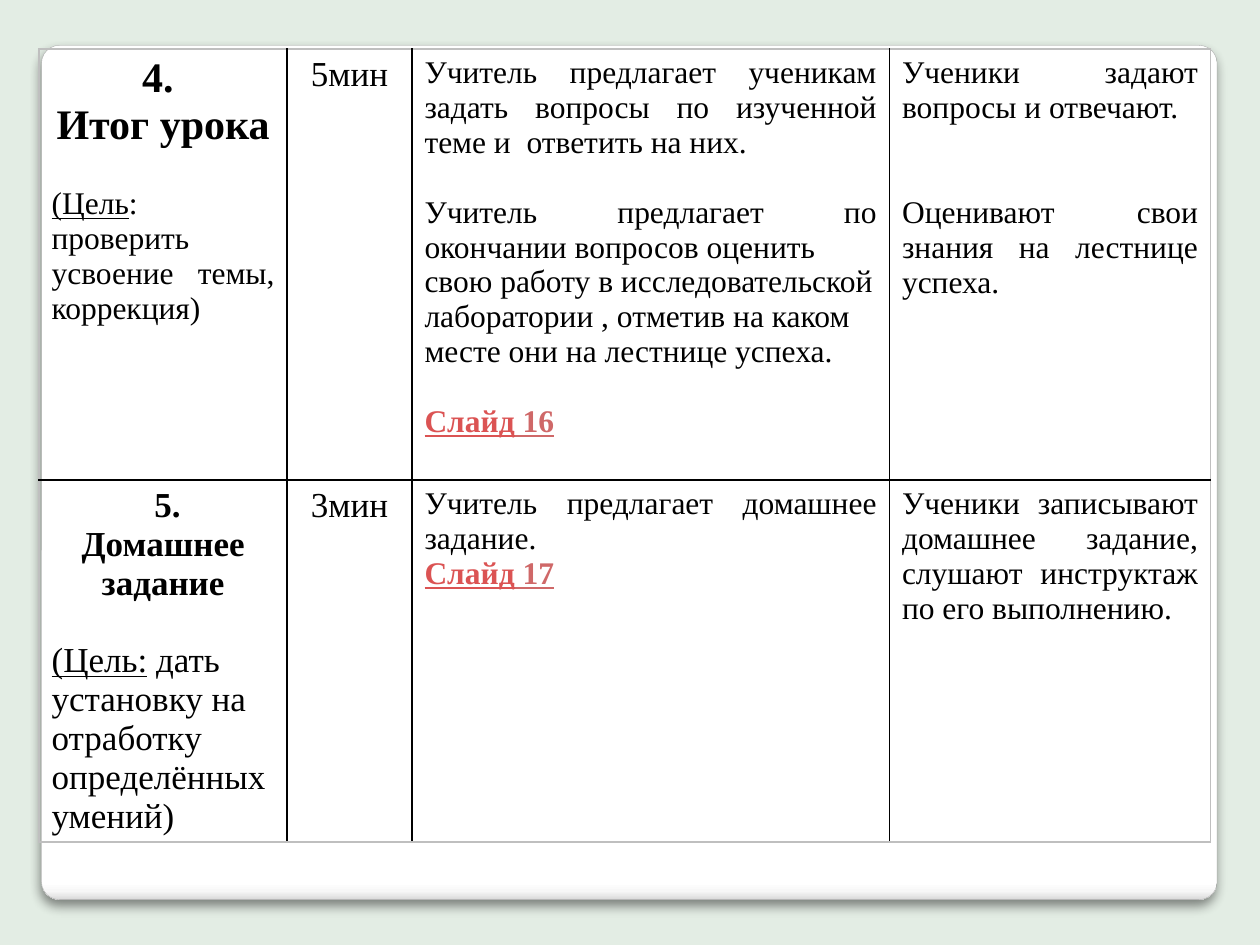
from lxml import etree
from pptx import Presentation
from pptx.dml.color import RGBColor
from pptx.enum import shapes, text
from pptx.oxml import parse_xml
from pptx.oxml.ns import nsdecls, qn
from pptx.util import Inches, Pt

BACKGROUND = RGBColor(0xE3, 0xED, 0xE4)
BLACK = RGBColor(0, 0, 0)
PANEL_LINE = RGBColor(0xA4, 0xA4, 0xA4)
OUTER_LINE = RGBColor(0xBF, 0xBF, 0xBF)
LINK = RGBColor(0xDB, 0x53, 0x53)
LINK_NUMBER = RGBColor(0xCF, 0x68, 0x68)
PANEL_STOPS = [(0, "FFFFFF"), (98, "FFFFFF"), (99, "F7F7F7"), (100, "DADADA")]

FONT = "Times New Roman"
LINE_HEIGHT = 1.11  # line height of the font relative to its size
CENTER = text.PP_ALIGN.CENTER
JUSTIFY = text.PP_ALIGN.JUSTIFY
LEFT = text.PP_ALIGN.LEFT

COLUMN_WIDTHS = [1.97, 0.99, 3.79, 2.55]
ROW_HEIGHTS = [3.42, 2.87]


def para(*runs, size=18, align=JUSTIFY, gap=0):
    """Describe a paragraph; gap is the space above it, in lines."""
    return runs, size, align, gap


def run(content, bold=False, underline=False, color=BLACK):
    return content, bold, underline, color


def slide_link(number):
    return (run("Слайд", True, True, LINK),
            run(f" {number}", True, True, LINK_NUMBER))


def goal(rest):
    return run("(Цель", underline=True), run(rest)


ROWS = [
    [
        [para(run("4. ", True), size=24, align=CENTER),
         para(run("Итог урока", True), size=24, align=CENTER),
         para(*goal(": проверить усвоение темы, коррекция)"), gap=1.11)],
        [para(run("5мин"), size=20, align=CENTER)],
        [para(run("Учитель предлагает ученикам задать вопросы по изученной "
                  "теме и  ответить на них.")),
         para(run("Учитель предлагает по окончании вопросов оценить "), gap=1),
         para(run("свою работу в исследовательской лаборатории , отметив "
                  "на каком месте они на лестнице успеха."), align=LEFT),
         para(*slide_link(16), gap=1)],
        [para(run("Ученики задают вопросы и отвечают.")),
         para(run("Оценивают свои знания на лестнице успеха."), gap=2)],
    ],
    [
        [para(run(" 5.", True), size=20, align=CENTER),
         para(run("Домашнее задание", True), size=20, align=CENTER),
         para(run("(Цель:", underline=True),
              run(" дать установку на отработку определённых умений)"),
              size=20, align=LEFT, gap=1)],
        [para(run("3мин"), size=20, align=CENTER)],
        [para(run("Учитель предлагает домашнее задание. ")),
         para(*slide_link(17))],
        [para(run("Ученики записывают домашнее задание, слушают инструктаж "
                  "по его выполнению. "))],
    ],
]


def add_panel(slide):
    sp = slide.shapes.add_shape(
        shapes.MSO_SHAPE.ROUNDED_RECTANGLE,
        Inches(0.33), Inches(0.36), Inches(9.33), Inches(6.78))
    sp.adjustments[0] = 0.021
    sp.line.color.rgb = PANEL_LINE
    sp.line.width = Pt(0.16)

    # Four-stop vertical gradient
    sp.fill.gradient()
    sp.fill.gradient_angle = 270
    stops = sp._element.spPr.find(qn("a:gradFill")).find(qn("a:gsLst"))
    for stop in list(stops):
        stops.remove(stop)
    for position, color in PANEL_STOPS:
        stop = etree.SubElement(stops, qn("a:gs"), pos=str(position * 1000))
        etree.SubElement(stop, qn("a:srgbClr"), val=color)

    # Soft shadow below the panel
    sp.shadow.inherit = False
    effects = sp._element.spPr.find(qn("a:effectLst"))
    effects.append(parse_xml(
        f'<a:outerShdw {nsdecls("a")} blurRad="{Pt(6)}" dist="{Pt(4)}" '
        'dir="5400000" rotWithShape="0"><a:srgbClr val="000000">'
        '<a:alpha val="45000"/></a:srgbClr></a:outerShdw>'))


def fill_cell(cell, paragraphs):
    cell.fill.background()
    tf = cell.text_frame
    for i, (runs, size, align, gap) in enumerate(paragraphs):
        p = tf.add_paragraph() if i else tf.paragraphs[0]
        p.alignment = align
        p.space_before = Pt(round(gap * size * LINE_HEIGHT))
        p.font.name = FONT
        p.font.size = Pt(size)
        for content, bold, underline, color in runs:
            r = p.add_run()
            r.text = content
            r.font.bold = bold
            r.font.underline = underline
            r.font.color.rgb = color


def set_borders(cell, colors):
    """Give the left, right, top and bottom edges their colours."""
    tc_pr = cell._tc.get_or_add_tcPr()
    for i, (side, color) in enumerate(zip("LRTB", colors)):
        tc_pr.insert(i, parse_xml(
            f'<a:ln{side} {nsdecls("a")} w="{Pt(1)}"><a:solidFill>'
            f'<a:srgbClr val="{color}"/></a:solidFill></a:ln{side}>'))


def add_lesson_table(slide):
    row_count, col_count = len(ROWS), len(COLUMN_WIDTHS)
    table = slide.shapes.add_table(
        row_count, col_count, Inches(0.31), Inches(0.39),
        Inches(sum(COLUMN_WIDTHS)), Inches(sum(ROW_HEIGHTS))).table
    table.first_row = table.horz_banding = False
    for column, width in zip(table.columns, COLUMN_WIDTHS):
        column.width = Inches(width)
    for row, height in zip(table.rows, ROW_HEIGHTS):
        row.height = Inches(height)

    # Black inner lines, grey outer frame
    for i, contents in enumerate(ROWS):
        for j, paragraphs in enumerate(contents):
            cell = table.cell(i, j)
            fill_cell(cell, paragraphs)
            outer = (j == 0, j == col_count - 1, i == 0, i == row_count - 1)
            set_borders(cell, [OUTER_LINE if o else BLACK for o in outer])


def main():
    prs = Presentation()
    prs.slide_width, prs.slide_height = Inches(10), Inches(7.5)
    slide = prs.slides.add_slide(prs.slide_layouts[6])
    slide.background.fill.solid()
    slide.background.fill.fore_color.rgb = BACKGROUND
    add_panel(slide)
    add_lesson_table(slide)
    prs.save("out.pptx")


if __name__ == "__main__":
    main()
